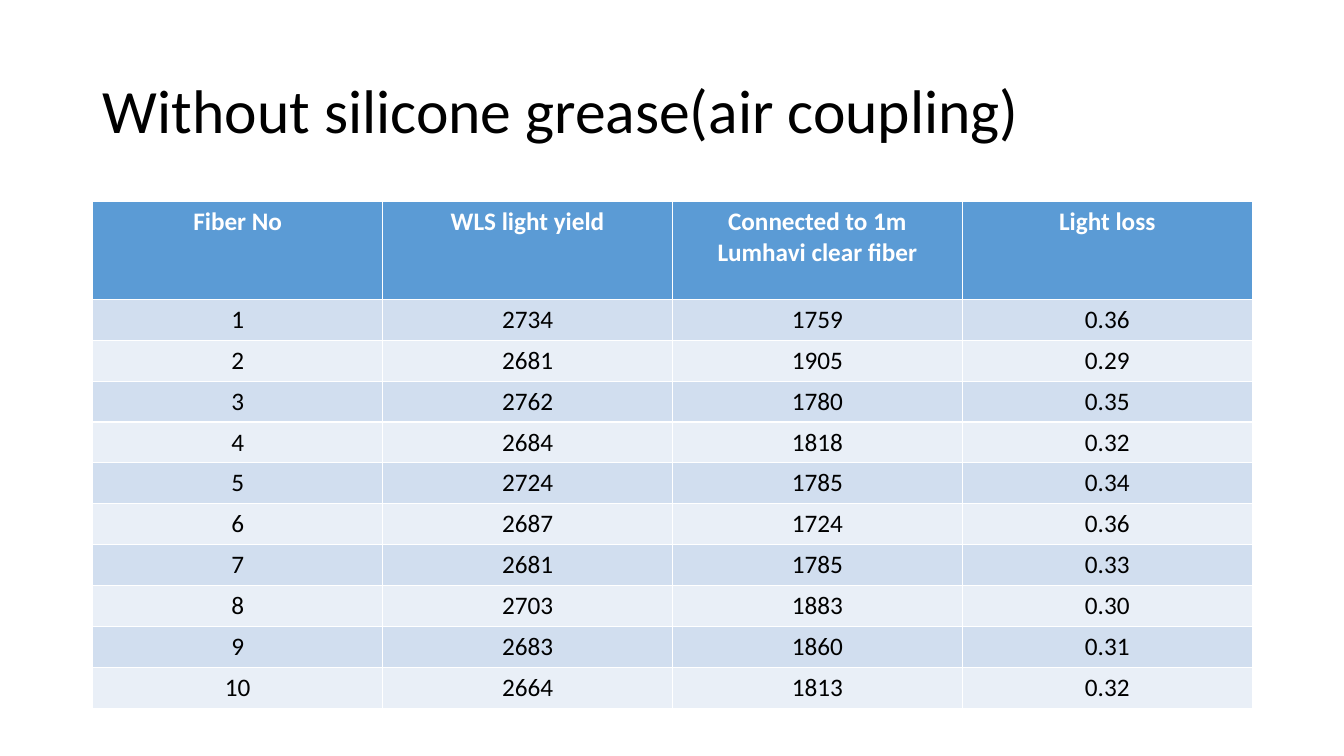
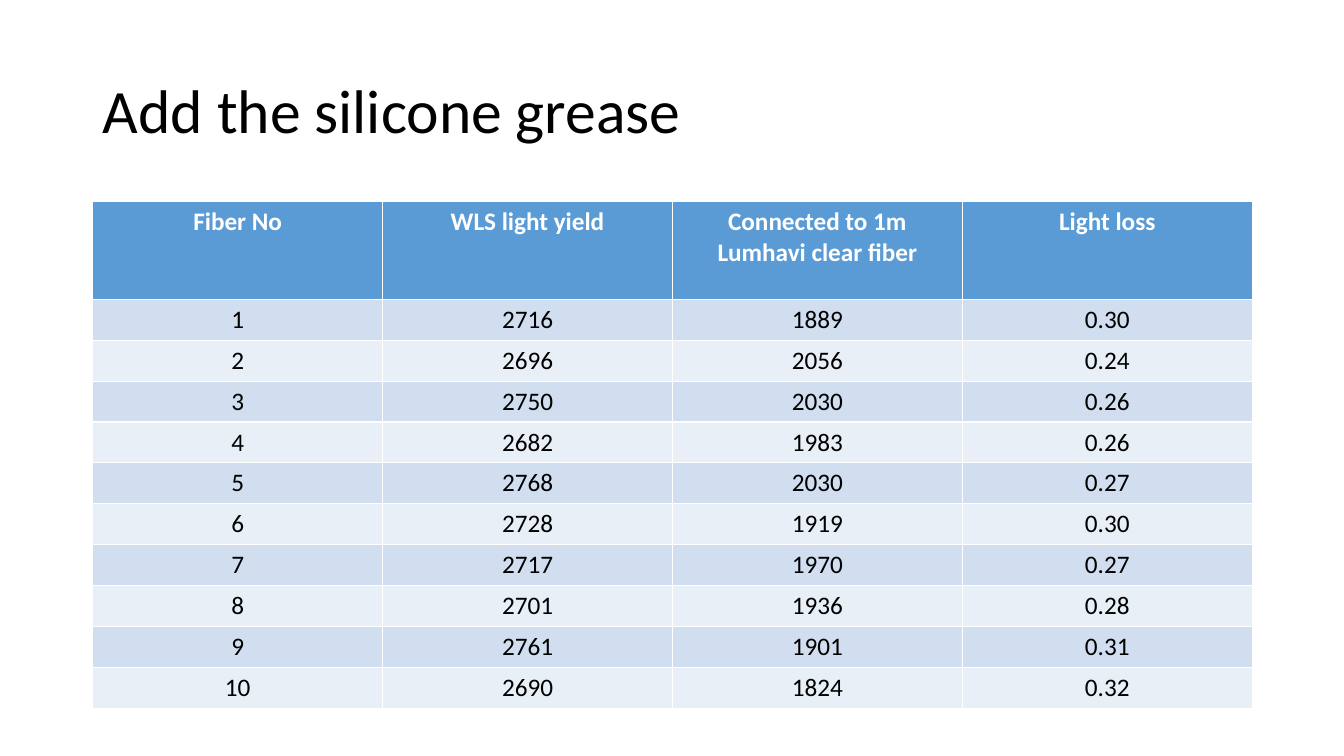
"""Build two slides that tabulate fiber light loss without and with silicone grease."""
from pptx import Presentation
from pptx.dml.color import RGBColor
from pptx.enum.text import MSO_ANCHOR, PP_ALIGN
from pptx.util import Inches, Pt

FONT = "Calibri"
BLACK, WHITE = "000000", "FFFFFF"
HEADER_FILL = "5B9BD5"
BAND_FILLS = ["E9EFF7", "D1DEEF"]
LEFT, WIDTH = Inches(0.92), Inches(11.5)
HEADER_HEIGHT, ROW_HEIGHT = Inches(0.97), Inches(0.39)

HEADINGS = ["Fiber No", "WLS light yield", "Connected to 1m Lumhavi clear fiber", "Light loss"]
MEASUREMENTS = {
    "Without silicone grease(air coupling)": [
        (2734, 1759, 0.36), (2681, 1905, 0.29), (2762, 1780, 0.35), (2684, 1818, 0.32),
        (2724, 1785, 0.34), (2687, 1724, 0.36), (2681, 1785, 0.33), (2703, 1883, 0.30),
        (2683, 1860, 0.31), (2664, 1813, 0.32),
    ],
    "Add the silicone grease": [
        (2716, 1889, 0.30), (2696, 2056, 0.24), (2750, 2030, 0.26), (2682, 1983, 0.26),
        (2768, 2030, 0.27), (2728, 1919, 0.30), (2717, 1970, 0.27), (2701, 1936, 0.28),
        (2761, 1901, 0.31), (2690, 1824, 0.32),
    ],
}


def color(value):
    return RGBColor.from_string(value)


def add_text(frame, text, size, text_color, alignment, bold=False):
    para = frame.paragraphs[0]
    para.alignment = alignment
    span = para.add_run()
    span.text = text
    span.font.name = FONT
    span.font.size = Pt(size)
    span.font.bold = bold
    span.font.color.rgb = color(text_color)
    return para


deck = Presentation()
deck.slide_width, deck.slide_height = Inches(13.33), Inches(7.5)

for heading, readings in MEASUREMENTS.items():
    page = deck.slides.add_slide(deck.slide_layouts[5])
    title = page.shapes.title
    title.left, title.top, title.width, title.height = LEFT, Inches(0.4), WIDTH, Inches(1.45)
    title.text_frame.vertical_anchor = MSO_ANCHOR.MIDDLE
    title_para = add_text(title.text_frame, heading, 44, BLACK, PP_ALIGN.LEFT)
    title_para.line_spacing = 0.9

    rows = [HEADINGS]
    for number, (light_yield, connected, loss) in enumerate(readings, start=1):
        rows.append([str(number), str(light_yield), str(connected), f"{loss:.2f}"])

    table_height = HEADER_HEIGHT + ROW_HEIGHT * len(readings)
    table = page.shapes.add_table(
        len(rows), len(HEADINGS), LEFT, Inches(2), WIDTH, table_height
    ).table
    for row_index, values in enumerate(rows):
        is_header = row_index == 0
        table.rows[row_index].height = HEADER_HEIGHT if is_header else ROW_HEIGHT
        for column_index, value in enumerate(values):
            cell = table.cell(row_index, column_index)
            cell.fill.solid()
            cell.fill.fore_color.rgb = color(HEADER_FILL if is_header else BAND_FILLS[row_index % 2])
            text_color = WHITE if is_header else BLACK
            add_text(cell.text_frame, value, 18, text_color, PP_ALIGN.CENTER, bold=is_header)

deck.save("out.pptx")
